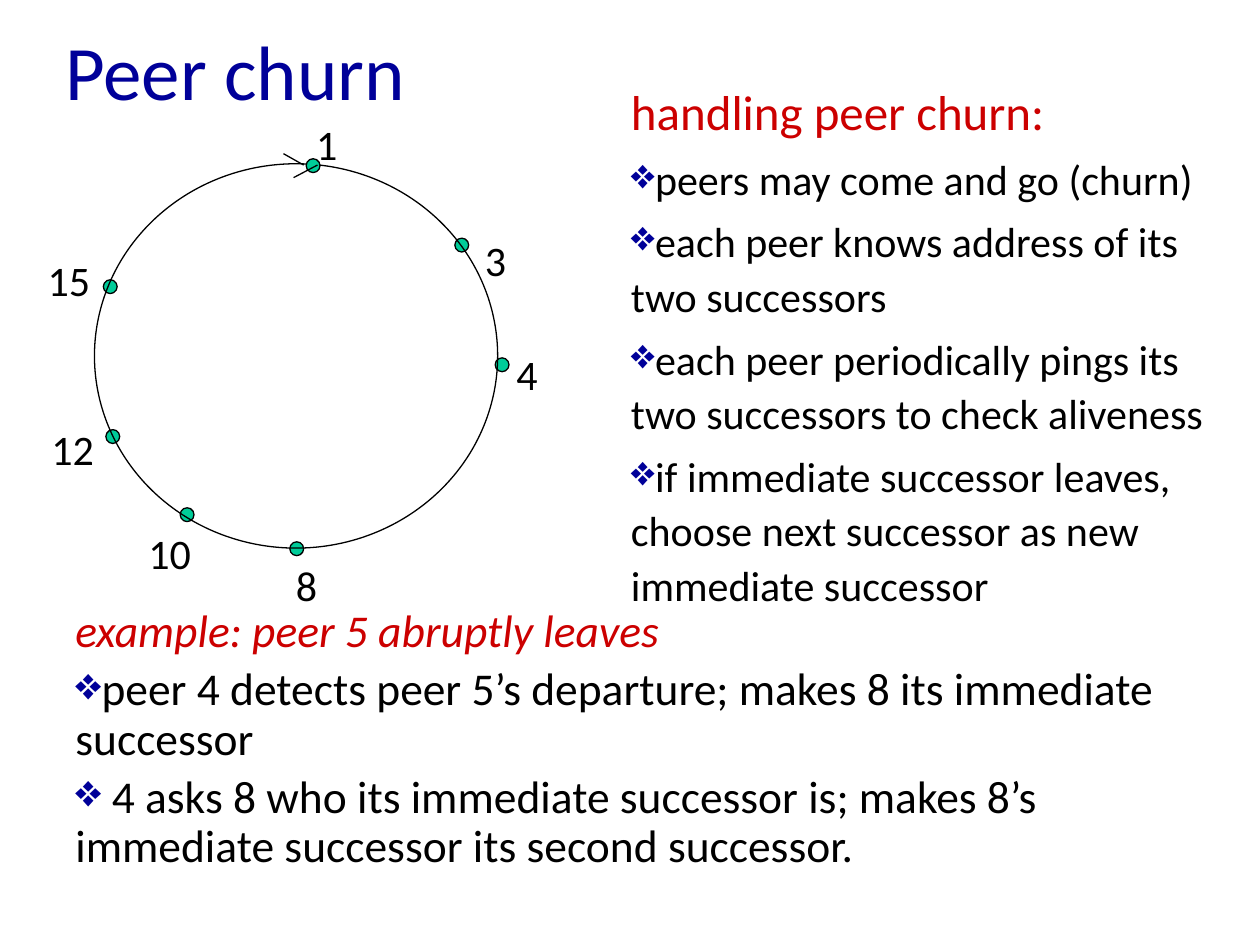
from lxml import etree
from pptx import Presentation
from pptx.dml.color import RGBColor
from pptx.enum import shapes, text
from pptx.oxml.ns import qn
from pptx.util import Inches, Pt

COLORS = {"navy": "000099", "red": "CC0000", "black": "000000", "green": "00CC99"}
FONT = "Calibri"
DOT = 0.11

# Content: peer id, dot left/top, label left/top
PEERS = [
    ("3", (3.61, 1.89), (3.75, 1.81)),
    ("4", (3.93, 2.84), (4.00, 2.72)),
    ("8", (2.30, 4.30), (2.25, 4.39)),
    ("10", (1.43, 4.03), (1.08, 4.14)),
    ("12", (0.84, 3.41), (0.31, 3.31)),
    ("15", (0.82, 2.22), (0.28, 1.97)),
]
FIRST_PEER = ("1", (2.43, 1.26), (2.41, 0.89))
RING = (0.75, 1.3, 3.2, 3.05)
ARROW = [((2.25, 1.22), (2.41, 1.31)), ((2.52, 1.31), (2.33, 1.41))]

EXAMPLE = {
    "box": (0.5, 4.78, 9, 2.33),
    "heading": "example: peer 5 abruptly leaves",
    "heading_size": 26, "italic": True, "size": 26,
    "heading_spacing": 0.9, "spacing": 0.9, "before": 5.2,
    "bullets": [
        "peer 4 detects peer 5’s departure; makes 8 its immediate successor",
        " 4 asks 8 who its immediate successor is; makes 8’s immediate "
        "successor its second successor.",
    ],
}
HANDLING = {
    "box": (4.91, 0.6, 4.84, 4.66),
    "heading": "handling peer churn:",
    "heading_size": 28, "italic": False, "size": 24,
    "heading_spacing": 1.0, "spacing": 1.08, "before": 4.8,
    "bullets": [
        "peers may come and go (churn)",
        "each peer knows address of its two successors",
        "each peer periodically pings its \vtwo successors to check aliveness",
        "if immediate successor leaves, choose next successor as new "
        "immediate successor",
    ],
}


def rgb(name):
    return RGBColor.from_string(COLORS[name])


def add_box(slide, box, wrap=True, anchor=text.MSO_ANCHOR.TOP):
    tf = slide.shapes.add_textbox(*map(Inches, box)).text_frame
    tf.word_wrap = wrap
    tf.vertical_anchor = anchor
    return tf


def write(p, words, size, color, italic=False):
    p.text = words
    p.font.name, p.font.size, p.font.italic = FONT, Pt(size), italic
    p.font.color.rgb = rgb(color)


def add_bullet(p):
    pPr = p._p.get_or_add_pPr()
    pPr.set("marL", "0")
    pPr.set("indent", str(Inches(-0.12)))
    color = etree.Element(qn("a:buClr"))
    etree.SubElement(color, qn("a:srgbClr"), val=COLORS["navy"])
    bullet = etree.Element(qn("a:buChar"), char="❖")
    # Bullet settings come before the default run properties
    run_props = pPr.find(qn("a:defRPr"))
    run_props.addprevious(color)
    run_props.addprevious(bullet)


def add_bulleted(slide, block):
    tf = add_box(slide, block["box"])
    p = tf.paragraphs[0]
    write(p, block["heading"], block["heading_size"], "red", block["italic"])
    p.line_spacing = block["heading_spacing"]
    for words in block["bullets"]:
        p = tf.add_paragraph()
        write(p, words, block["size"], "black")
        p.line_spacing = block["spacing"]
        p.space_before = Pt(block["before"])
        add_bullet(p)


def add_ellipse(slide, box, fill=None):
    sp = slide.shapes.add_shape(shapes.MSO_SHAPE.OVAL, *map(Inches, box))
    sp.shadow.inherit = False
    if fill:
        sp.fill.solid()
        sp.fill.fore_color.rgb = rgb(fill)
    else:
        sp.fill.background()
    sp.line.color.rgb = rgb("black")
    sp.line.width = Pt(0.75)


def add_peer(slide, name, dot, label):
    add_ellipse(slide, (*dot, DOT, DOT), "green")
    width = 0.39 if len(name) == 1 else 0.58
    tf = add_box(slide, (*label, width, 0.51), wrap=False)
    write(tf.paragraphs[0], name, 24, "black")


def add_line(slide, start, end):
    line = slide.shapes.add_connector(
        shapes.MSO_CONNECTOR.STRAIGHT, *map(Inches, start + end))
    line.line.color.rgb = rgb("black")
    line.line.width = Pt(0.75)
    etree.SubElement(line._element.spPr, qn("a:effectLst"))


def main():
    prs = Presentation()
    prs.slide_width, prs.slide_height = Inches(10), Inches(7.5)
    slide = prs.slides.add_slide(prs.slide_layouts[6])

    # Title
    tf = add_box(slide, (0.42, 0, 9, 1.11), anchor=text.MSO_ANCHOR.MIDDLE)
    write(tf.paragraphs[0], "Peer churn", 44, "navy")

    # Peer ring, with its direction arrow at peer 1
    for peer in PEERS:
        add_peer(slide, *peer)
    add_ellipse(slide, RING)
    add_peer(slide, *FIRST_PEER)
    for start, end in ARROW:
        add_line(slide, start, end)

    # Explanations
    for block in (EXAMPLE, HANDLING):
        add_bulleted(slide, block)

    prs.save("out.pptx")


if __name__ == "__main__":
    main()
